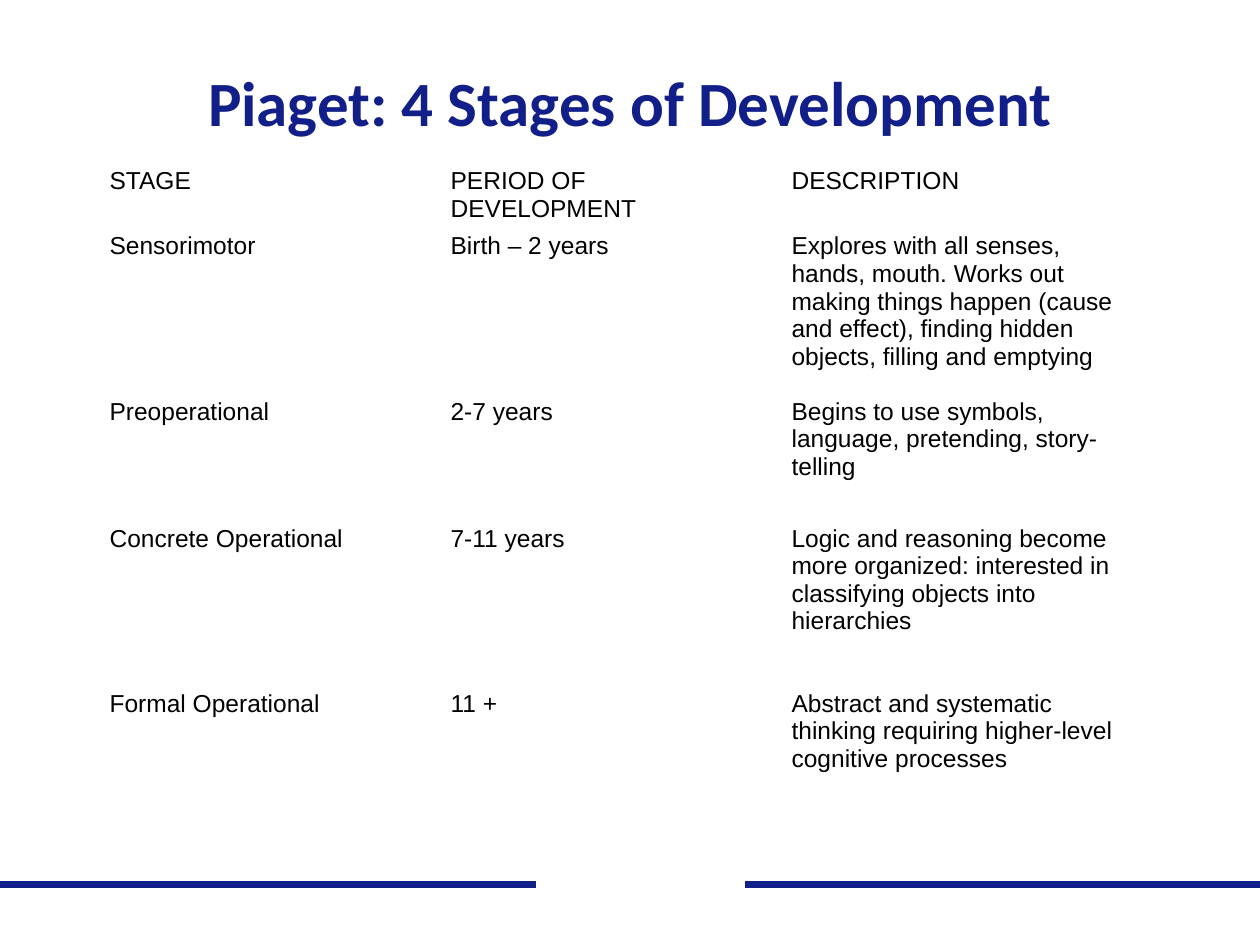
from typing import NamedTuple

from lxml.etree import SubElement
from pptx import Presentation
from pptx.dml.color import RGBColor
from pptx.enum.shapes import MSO_CONNECTOR as Connector
from pptx.enum.text import MSO_ANCHOR as Anchor, PP_ALIGN as Align
from pptx.oxml.ns import qn
from pptx.util import Inches, Pt

NAVY, WHITE, BLACK = "121F88", "FFFFFF", "000000"
RULE_TOP = 7.02


class Stage(NamedTuple):
    name: str
    period: str
    description: str
    height: float


class Rule(NamedTuple):
    start: float
    end: float
    color: str


STAGES = [
    Stage("STAGE", "PERIOD OF DEVELOPMENT", "DESCRIPTION", 0.42),
    Stage("Sensorimotor", "Birth – 2 years",
          "Explores with all senses, hands, mouth. Works out making things happen "
          "(cause and effect), finding hidden objects, filling and emptying", 1.31),
    Stage("Preoperational", "2-7 years",
          "Begins to use symbols, language, pretending, story-telling", 1.01),
    Stage("Concrete Operational", "7-11 years",
          "Logic and reasoning become more organized: interested in classifying "
          "objects into hierarchies", 1.31),
    Stage("Formal Operational", "11 +",
          "Abstract and systematic thinking requiring higher-level cognitive "
          "processes", 1.01),
]
RULES = [Rule(0, 10, NAVY), Rule(4.25, 5.91, WHITE)]


def rgb(color: str) -> RGBColor:
    return RGBColor.from_string(color)


def add_span(para, text: str, font: str, size: float, color: str, bold: bool = False) -> None:
    span = para.add_run()
    span.text = text
    span.font.name = font
    span.font.size = Pt(size)
    span.font.bold = bold
    span.font.color.rgb = rgb(color)


def draw_rule(page, rule: Rule) -> None:
    line = page.shapes.add_connector(Connector.STRAIGHT, Inches(rule.start), Inches(RULE_TOP),
                                     Inches(rule.end), Inches(RULE_TOP))
    line.line.color.rgb = rgb(rule.color)
    line.line.width = Pt(4.5)
    SubElement(line._element.spPr, qn("a:effectLst"))


def draw_title(page, text: str) -> None:
    title = page.shapes.title
    title.left, title.top = Inches(0.69), Inches(0.4)
    title.width, title.height = Inches(8.62), Inches(0.89)
    title.text_frame.vertical_anchor = Anchor.MIDDLE
    para = title.text_frame.paragraphs[0]
    para.alignment = Align.CENTER
    para.line_spacing = 0.9
    add_span(para, text, "Calibri", 36, NAVY, bold=True)


def fill_cell(cell, text: str) -> None:
    cell.fill.background()
    cell.margin_left = cell.margin_right = Inches(0.07)
    cell.margin_top = cell.margin_bottom = Inches(0.04)
    add_span(cell.text_frame.paragraphs[0], text, "Arial", 14, BLACK)


def draw_stage_table(page, stages: list[Stage]) -> None:
    total = sum(stage.height for stage in stages)
    table = page.shapes.add_table(len(stages), 3, Inches(0.8), Inches(1.29),
                                  Inches(8.12), Inches(total)).table
    table.first_row = table.horz_banding = False
    for row, stage in zip(table.rows, stages):
        row.height = Inches(stage.height)
        for cell, text in zip(row.cells, (stage.name, stage.period, stage.description)):
            fill_cell(cell, text)


def main() -> None:
    deck = Presentation()
    deck.slide_width, deck.slide_height = Inches(10), Inches(7.5)
    page = deck.slides.add_slide(deck.slide_layouts.get_by_name("Title Only"))
    page.background.fill.solid()
    page.background.fill.fore_color.rgb = rgb(WHITE)
    for rule in RULES:
        draw_rule(page, rule)
    draw_stage_table(page, STAGES)
    draw_title(page, "Piaget: 4 Stages of Development")
    deck.save("out.pptx")


if __name__ == "__main__":
    main()
